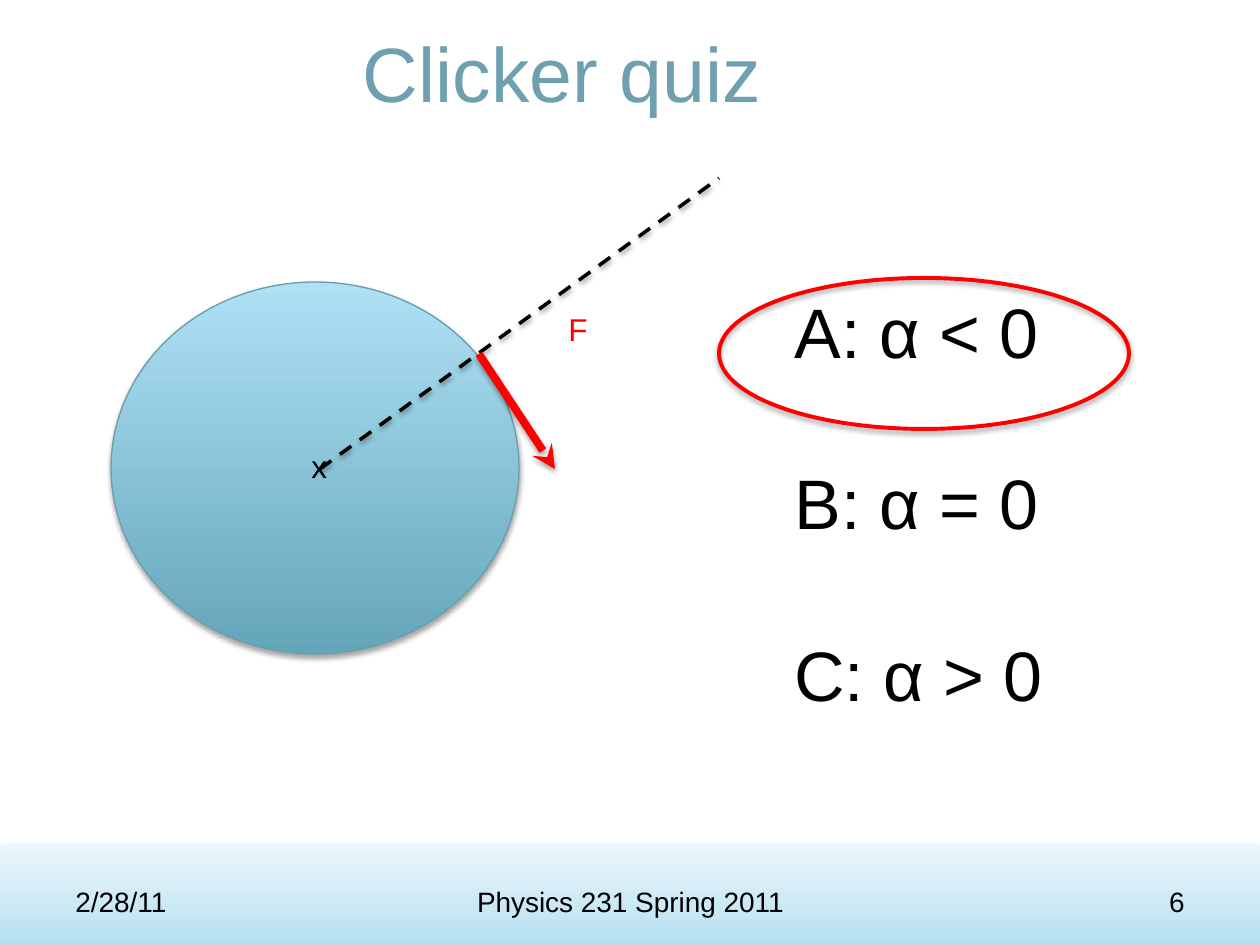
"""Build a physics clicker-quiz slide about angular acceleration."""
from lxml.etree import SubElement
from pptx import Presentation
from pptx.dml.color import RGBColor
from pptx.enum.dml import MSO_LINE
from pptx.enum.shapes import MSO_CONNECTOR, MSO_SHAPE
from pptx.enum.text import MSO_ANCHOR, PP_ALIGN
from pptx.oxml.ns import qn
from pptx.util import Emu, Pt

PX = 914400 / 126
FONT = "Arial"
BLACK, RED, TEAL = "000000", "FF0000", "6EA0B0"


def px(*lengths):
    """Turn pixel lengths into EMU."""
    return [Emu(round(length * PX)) for length in lengths]


def rgb(code):
    """Turn a hex string into a colour."""
    return RGBColor.from_string(code)


def add_shadow(shape, opacity, distance):
    """Give a shape or connector a soft shadow straight below it."""
    effects = SubElement(shape._element.spPr, qn("a:effectLst"))
    outer = SubElement(effects, qn("a:outerShdw"), blurRad="40000",
                       dist=str(distance), dir="5400000", rotWithShape="0")
    tint = SubElement(outer, qn("a:srgbClr"), val=BLACK)
    SubElement(tint, qn("a:alpha"), val=str(opacity * 1000))


def fill_gradient(shape, stops):
    """Fill a shape from bottom to top with (percent, colour) stops."""
    shape.fill.gradient()
    shape.fill.gradient_angle = 90
    stop_list = shape._element.spPr.find(qn("a:gradFill")).find(qn("a:gsLst"))
    for old_stop in list(stop_list):
        stop_list.remove(old_stop)
    for percent, colour in stops:
        stop = SubElement(stop_list, qn("a:gs"), pos=str(percent * 1000))
        SubElement(stop, qn("a:srgbClr"), val=colour)


def add_figure(slide, kind, box, stops=None, outline=None, width=0,
               opacity=35, distance=23000):
    """Add a preset shape with optional gradient and outline."""
    figure = slide.shapes.add_shape(kind, *px(*box))
    if stops:
        fill_gradient(figure, stops)
    else:
        figure.fill.background()
    if outline:
        figure.line.color.rgb = rgb(outline)
        figure.line.width = Pt(width)
    else:
        figure.line.fill.background()
    add_shadow(figure, opacity, distance)


def add_line(slide, ends, colour, width, dash=None, head=None):
    """Add a straight line with optional dashes and arrowhead."""
    line = slide.shapes.add_connector(MSO_CONNECTOR.STRAIGHT, *px(*ends))
    line.line.color.rgb = rgb(colour)
    line.line.width = Pt(width)
    if dash:
        line.line.dash_style = dash
    if head:
        SubElement(line.line._get_or_add_ln(), qn("a:tailEnd"), type=head)
    add_shadow(line, 38, 20000)


def format_text(frame, size, colour, align, gap=0):
    """Format every paragraph, with a gap in points between them."""
    for index, paragraph in enumerate(frame.paragraphs):
        paragraph.alignment = align
        if index and gap:
            paragraph.space_before = Pt(gap)
        for run in paragraph.runs:
            run.font.name = FONT
            run.font.size = Pt(size)
            run.font.color.rgb = rgb(colour)


def add_text(slide, box, text, size, colour=BLACK, align=PP_ALIGN.LEFT,
             anchor=MSO_ANCHOR.TOP, wrap=True, gap=0):
    """Add a text box."""
    frame = slide.shapes.add_textbox(*px(*box)).text_frame
    frame.word_wrap = wrap
    frame.vertical_anchor = anchor
    frame.text = text
    format_text(frame, size, colour, align, gap)


def set_title(slide, box, text):
    """Place and format the title."""
    title = slide.shapes.title
    title.left, title.top, title.width, title.height = px(*box)
    title.text_frame.text = text
    title.text_frame.vertical_anchor = MSO_ANCHOR.MIDDLE
    format_text(title.text_frame, 44, TEAL, PP_ALIGN.CENTER)


def add_footer(slide):
    """Add the gradient band with date, course and page number."""
    add_figure(slide, MSO_SHAPE.RECTANGLE, (0, 844, 1260, 101),
               [(0, "B4DFF0"), (35, "CAE8F4"), (100, "EAF6FB")],
               opacity=38, distance=20000)
    for left, width, text, align in (
            (63, 294, "2/28/11", PP_ALIGN.LEFT),
            (431, 399, "Physics 231 Spring 2011", PP_ALIGN.CENTER),
            (903, 294, "6", PP_ALIGN.RIGHT)):
        add_text(slide, (left, 876, width, 50), text, 16, align=align,
                 anchor=MSO_ANCHOR.MIDDLE)


def add_disk(slide):
    """Draw the disk, its radial line and the applied force."""
    add_figure(slide, MSO_SHAPE.OVAL, (111, 282, 408, 372),
               [(0, "64A5BA"), (100, "AFE1F5")], "6A9DAE", 0.75)
    add_text(slide, (299, 441, 42, 50), "x", 18, wrap=False)
    add_line(slide, (320, 469, 719, 178), BLACK, 2, dash=MSO_LINE.DASH)
    add_line(slide, (479, 354, 555, 469), RED, 4.5, head="stealth")
    add_text(slide, (556, 304, 45, 50), "F", 18, RED, wrap=False)


def add_answers(slide):
    """List the answers and ring the correct one."""
    add_text(slide, (782, 282, 347, 437),
             "A: α < 0\nB: α = 0\nC: α > 0", 40, gap=50)
    add_figure(slide, MSO_SHAPE.OVAL, (719, 278, 410, 151),
               outline=RED, width=2.25)


def main():
    """Build and save the slide."""
    deck = Presentation()
    deck.slide_width, deck.slide_height = px(1260, 945)
    slide = deck.slides.add_slide(deck.slide_layouts[5])
    add_footer(slide)
    set_title(slide, (29, 16, 1066, 112), "Clicker quiz")
    add_disk(slide)
    add_answers(slide)
    deck.save("out.pptx")


if __name__ == "__main__":
    main()
